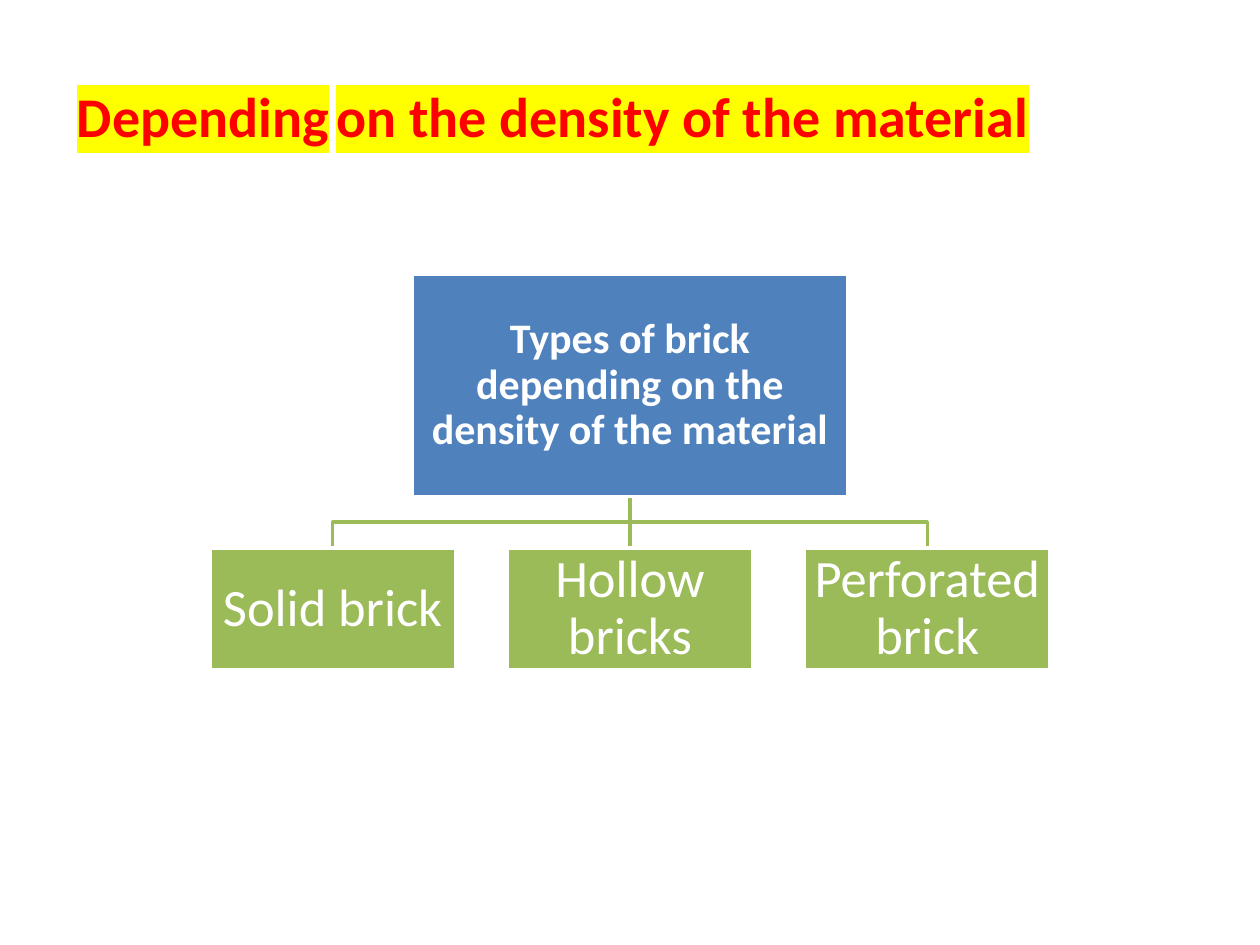
from dataclasses import dataclass

from lxml.etree import SubElement
from pptx import Presentation
from pptx.dml.color import RGBColor
from pptx.enum.shapes import MSO_CONNECTOR as Link, MSO_SHAPE as Shape
from pptx.enum.text import MSO_ANCHOR as Anchor, MSO_AUTO_SIZE as Fit, PP_ALIGN as Align
from pptx.oxml.ns import qn
from pptx.util import Inches, Pt


@dataclass(frozen=True)
class Theme:
    """Colours, type sizes and line width of the slide."""
    font: str = "Calibri"
    title: str = "FF0000"
    marker: str = "FFFF00"
    black: str = "000000"
    white: str = "FFFFFF"
    root: str = "4F81BD"
    child: str = "9BBB59"
    title_size: int = 32
    gap_size: int = 18
    root_size: int = 24
    child_size: int = 30
    line: int = 2


THEME = Theme()
CENTRE = 5
PITCH = 2.36
ROOT_TOP, ROOT_WIDTH, ROOT_HEIGHT = 2.18, 3.46, 1.76
CHILD_TOP, CHILD_WIDTH, CHILD_HEIGHT = 4.35, 1.95, 0.97
CHILDREN = ("Solid brick", "Hollow bricks", "Perforated brick")


def add_text(para, text, size, color, bold=False, marker=None):
    """Add a formatted span to a paragraph, highlighted if a marker is given."""
    span = para.add_run()
    span.text = text
    font = span.font
    font.name, font.size, font.bold = THEME.font, Pt(size), bold
    font.color.rgb = RGBColor.from_string(color)
    if marker:
        props = span._r.get_or_add_rPr()
        highlight = SubElement(props, qn("a:highlight"))
        SubElement(highlight, qn("a:srgbClr"), val=marker)
        props.find(qn("a:solidFill")).addnext(highlight)


def set_line(shape, color):
    """Give a shape its outline."""
    shape.line.color.rgb = RGBColor.from_string(color)
    shape.line.width = Pt(THEME.line)


def add_title(page):
    """Fill the title placeholder with highlighted text."""
    box = page.shapes.title
    box.left, box.top, box.width, box.height = map(Inches, (0.51, 0.6, 8.58, 0.64))
    frame = box.text_frame
    frame.auto_size, frame.vertical_anchor = Fit.NONE, Anchor.TOP
    para = frame.paragraphs[0]
    para.alignment = Align.LEFT
    style = dict(size=THEME.title_size, color=THEME.title, bold=True, marker=THEME.marker)
    add_text(para, "Depending", **style)
    add_text(para, " ", THEME.gap_size, THEME.black)
    add_text(para, "on the density of the material", **style)


def add_box(page, text, centre, top, width, height, fill, size, bold=False):
    """Add a filled box with centred text."""
    box = page.shapes.add_shape(
        Shape.RECTANGLE, *map(Inches, (centre - width / 2, top, width, height)))
    box.shadow.inherit = False
    box.fill.solid()
    box.fill.fore_color.rgb = RGBColor.from_string(fill)
    set_line(box, THEME.white)
    frame = box.text_frame
    frame.word_wrap, frame.vertical_anchor = True, Anchor.MIDDLE
    frame.margin_left = frame.margin_right = Inches(0.02)
    frame.margin_top = frame.margin_bottom = Inches(0.02)
    para = frame.paragraphs[0]
    para.alignment, para.line_spacing = Align.CENTER, 0.9
    add_text(para, text, size, THEME.white, bold)


def add_branch(page, centre):
    """Join the root box to the child box at the given centre."""
    top, bottom = ROOT_TOP + ROOT_HEIGHT, CHILD_TOP
    if centre == CENTRE:
        branch = page.shapes.add_connector(
            Link.STRAIGHT, *map(Inches, (CENTRE, top, CENTRE, bottom)))
        SubElement(branch._element.spPr, qn("a:effectLst"))
        set_line(branch, THEME.child)
        return
    middle = (top + bottom) / 2
    corners = ((CENTRE, middle), (centre, middle), (centre, bottom))
    builder = page.shapes.build_freeform(Inches(CENTRE), Inches(top))
    builder.add_line_segments([tuple(map(Inches, point)) for point in corners], close=False)
    branch = builder.convert_to_shape()
    branch.shadow.inherit = False
    branch.fill.background()
    set_line(branch, THEME.child)


def main():
    """Build and save the slide."""
    deck = Presentation()
    deck.slide_width, deck.slide_height = Inches(10), Inches(7.5)
    page = deck.slides.add_slide(deck.slide_layouts[5])
    add_title(page)
    centres = [CENTRE + (column - 1) * PITCH for column in range(len(CHILDREN))]
    for centre in centres:
        add_branch(page, centre)
    add_box(page, "Types of brick depending on the density of the material", CENTRE,
            ROOT_TOP, ROOT_WIDTH, ROOT_HEIGHT, THEME.root, THEME.root_size, bold=True)
    for text, centre in zip(CHILDREN, centres):
        add_box(page, text, centre, CHILD_TOP, CHILD_WIDTH, CHILD_HEIGHT,
                THEME.child, THEME.child_size)
    deck.save("out.pptx")


if __name__ == "__main__":
    main()
